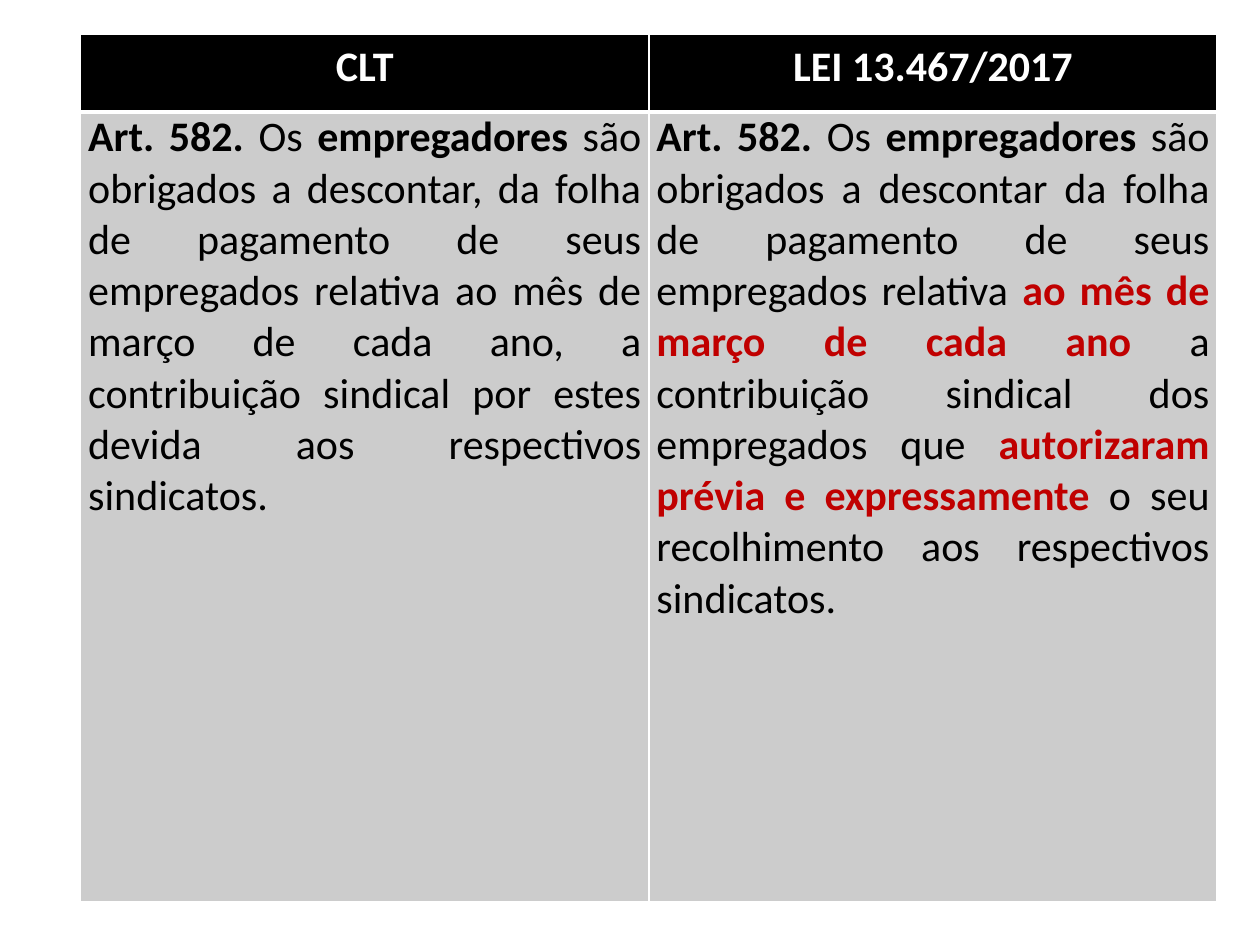
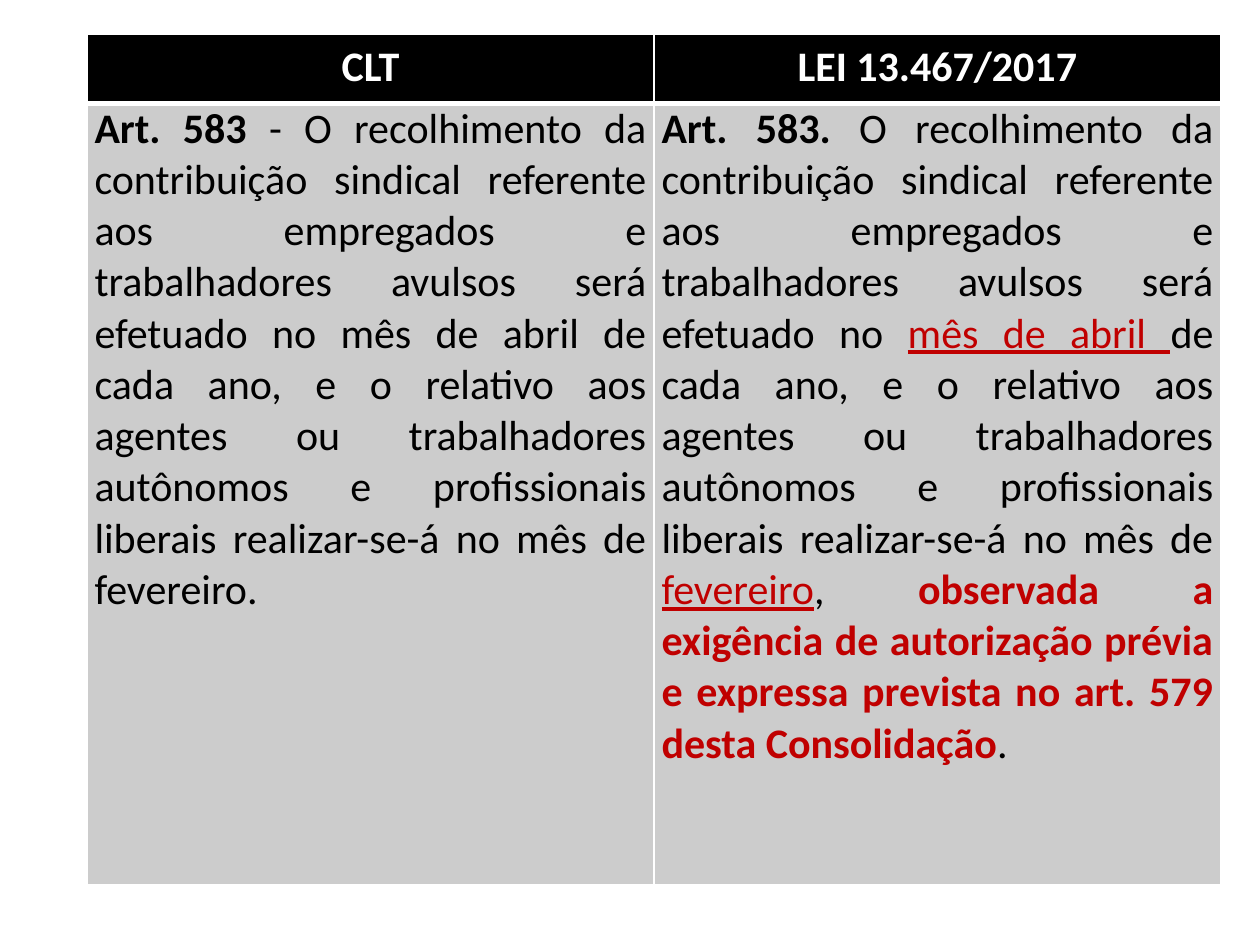
from lxml import etree
from pptx import Presentation
from pptx.dml.color import RGBColor
from pptx.enum.text import PP_ALIGN as Align
from pptx.oxml.ns import qn
from pptx.util import Inches, Pt

COLORS = {"header": "000000", "body": "CCCCCC", "border": "FFFFFF",
          "light": "FFFFFF", "dark": "000000", "red": "C00000"}
HEADERS = ["CLT", "LEI 13.467/2017"]

# Run styles: color, bold, underline
STYLES = {
    "header": ("light", True, False),
    "plain": ("dark", False, False),
    "bold": ("dark", True, False),
    "change": ("red", True, False),
    "date": ("red", False, True),
}

# Each comparison: table position, size, header height, old and new wording
COMPARISONS = [
    {
        "left": 0.64, "width": 9.02, "header_height": 0.62, "body_height": 6.27,
        "articles": [
            [("Art. 582. ", "bold"), ("Os ", "plain"), ("empregadores", "bold"),
             (" são obrigados a descontar, da folha de pagamento de seus empregados "
              "relativa ao mês de março de cada ano, a contribuição sindical por estes "
              "devida aos respectivos sindicatos.", "plain")],
            [("Art. 582. ", "bold"), ("Os ", "plain"), ("empregadores", "bold"),
             (" são obrigados a descontar da folha de pagamento de seus empregados "
              "relativa ", "plain"),
             ("ao mês de março de cada ano ", "change"),
             ("a contribuição sindical dos empregados que ", "plain"),
             ("autorizaram prévia e expressamente", "change"),
             (" o seu recolhimento aos respectivos sindicatos. ", "plain")],
        ],
    },
    {
        "left": 0.69, "width": 9.0, "header_height": 0.55, "body_height": 6.2,
        "articles": [
            [("Art. 583 ", "bold"),
             ("- O recolhimento da contribuição sindical referente aos empregados e "
              "trabalhadores avulsos será efetuado no mês de abril de cada ano, e o "
              "relativo aos agentes ou trabalhadores autônomos e profissionais liberais "
              "realizar-se-á no mês de fevereiro.", "plain")],
            [("Art. 583. ", "bold"),
             ("O recolhimento da contribuição sindical referente aos empregados e "
              "trabalhadores avulsos será efetuado no ", "plain"),
             ("mês de abril ", "date"),
             ("de cada ano, e o relativo aos agentes ou trabalhadores autônomos e "
              "profissionais liberais realizar-se-á no mês de ", "plain"),
             ("fevereiro", "date"), (", ", "plain"),
             ("observada a exigência de autorização prévia e expressa prevista no "
              "art. 579 desta Consolidação", "change"),
             (". ", "plain")],
        ],
    },
]


def set_borders(cell, widths):
    properties = cell._tc.get_or_add_tcPr()
    for side, width in widths.items():
        line = etree.SubElement(properties, qn(f"a:ln{side}"), w=str(Pt(width)))
        fill = etree.SubElement(line, qn("a:solidFill"))
        etree.SubElement(fill, qn("a:srgbClr"), val=COLORS["border"])


def fill_cell(cell, pieces, background, alignment, line_spacing):
    cell.fill.solid()
    cell.fill.fore_color.rgb = RGBColor.from_string(COLORS[background])
    cell.margin_left = cell.margin_right = Inches(0.06)
    cell.margin_top = cell.margin_bottom = 0
    paragraph = cell.text_frame.paragraphs[0]
    paragraph.alignment = alignment
    paragraph.line_spacing = line_spacing
    for text, style in pieces:
        color, bold, underline = STYLES[style]
        run = paragraph.add_run()
        run.text = text
        run.font.name = "Calibri"
        run.font.size = Pt(24)
        run.font.bold = bold
        run.font.underline = underline
        run.font.color.rgb = RGBColor.from_string(COLORS[color])


presentation = Presentation()
presentation.slide_width = Inches(10)
presentation.slide_height = Inches(7.5)

for comparison in COMPARISONS:
    slide = presentation.slides.add_slide(presentation.slide_layouts[6])

    # Two equal columns: the old law beside the new one
    heights = [comparison["header_height"], comparison["body_height"]]
    shape = slide.shapes.add_table(
        2, 2, Inches(comparison["left"]), Inches(0.27),
        Inches(comparison["width"]), Inches(sum(heights)))
    table = shape.table
    table.horz_banding = False
    for row, height in zip(table.rows, heights):
        row.height = Inches(height)

    # Header above article, with a thick rule between them
    for column, (header, article) in enumerate(zip(HEADERS, comparison["articles"])):
        header_cell = table.cell(0, column)
        set_borders(header_cell, {"L": 1, "R": 1, "T": 1, "B": 3})
        fill_cell(header_cell, [(header, "header")], "header", Align.CENTER, 1.15)
        article_cell = table.cell(1, column)
        set_borders(article_cell, {"L": 1, "R": 1, "T": 3, "B": 1})
        fill_cell(article_cell, article, "body", Align.JUSTIFY, 1.0)

presentation.save("out.pptx")
